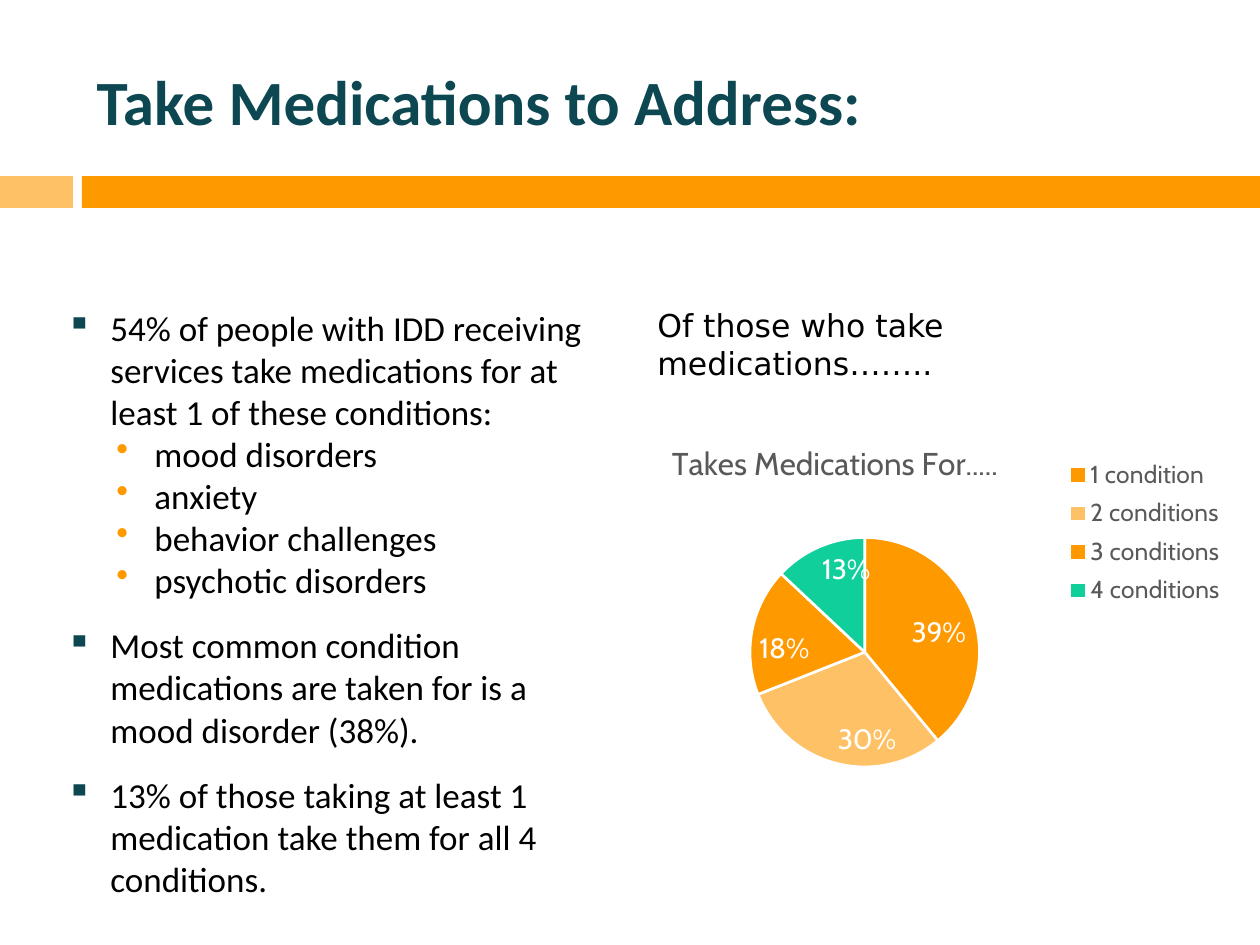
from lxml import etree
from pptx import Presentation
from pptx.chart.data import CategoryChartData
from pptx.dml.color import RGBColor
from pptx.enum.chart import XL_CHART_TYPE, XL_LABEL_POSITION, XL_LEGEND_POSITION
from pptx.enum.shapes import MSO_SHAPE
from pptx.enum.text import MSO_ANCHOR, PP_ALIGN
from pptx.oxml import parse_xml
from pptx.oxml.ns import nsdecls, qn
from pptx.util import Pt

PIE = XL_CHART_TYPE.PIE
INSIDE_END = XL_LABEL_POSITION.INSIDE_END
LEGEND_BOTTOM = XL_LEGEND_POSITION.BOTTOM
RECTANGLE = MSO_SHAPE.RECTANGLE
MIDDLE = MSO_ANCHOR.MIDDLE
LEFT = PP_ALIGN.LEFT

TEAL = RGBColor(0x0D, 0x47, 0x51)
ORANGE = RGBColor(0xFF, 0x99, 0x00)
PEACH = RGBColor(0xFF, 0xC1, 0x65)
GREEN = RGBColor(0x10, 0xCF, 0x9B)
GREY = RGBColor(0x59, 0x59, 0x59)
BLACK = RGBColor(0, 0, 0)
WHITE = RGBColor(0xFF, 0xFF, 0xFF)

PX_PER_INCH = 126
FINDINGS = [
    (0, 0, "54% of people with IDD receiving services take medications for at least 1 of these conditions:"),
    (1, 0, "mood disorders"),
    (1, 0, "anxiety"),
    (1, 0, "behavior challenges"),
    (1, 0, "psychotic disorders"),
    (0, 13.5, "Most common condition medications are taken for is a mood disorder (38%)."),
    (0, 13.5, "13% of those taking at least 1 medication take them for all 4 conditions."),
]
BULLETS = [("▪", TEAL, 44, 44), ("•", ORANGE, 88, 38)]
CONDITIONS = [
    ("1 condition", 0.39, ORANGE),
    ("2 conditions", 0.30, PEACH),
    ("3 conditions", 0.18, ORANGE),
    ("4 conditions", 0.13, GREEN),
]


def px(length):
    """Turn pixels into EMU."""
    return round(length * 914400 / PX_PER_INCH)


def emu_box(box):
    """Turn a pixel box into EMU."""
    return [px(length) for length in box]


def style(font, name, size, color, bold=False):
    """Set the face, size, colour and weight of a font."""
    font.name, font.size, font.bold = name, Pt(size), bold
    font.color.rgb = color


def add_span(para, text, name, size, color, bold=False):
    """Add one formatted run to a paragraph."""
    span = para.add_run()
    span.text = text
    style(span.font, name, size, color, bold)


def add_title(page, box):
    """Place the slide title."""
    title = page.shapes.title
    title.left, title.top, title.width, title.height = emu_box(box)
    title.text_frame.vertical_anchor = MIDDLE
    para = title.text_frame.paragraphs[0]
    para.alignment = LEFT
    add_span(para, "Take Medications to Address:", "Calibri", 36, TEAL, True)


def add_band(page, box):
    """Draw the two-part band below the title."""
    left, top, width, height = box
    tab, gap = 73, 9
    rest = tab + gap
    for offset, length, color in [(0, tab, PEACH), (rest, width - rest, ORANGE)]:
        bar = page.shapes.add_shape(
            RECTANGLE, *emu_box((left + offset, top, length, height)))
        bar.shadow.inherit = False
        bar.fill.solid()
        bar.fill.fore_color.rgb = color
        bar.line.fill.background()


def set_bullet(para, level):
    """Give a paragraph the bullet and indent of its level."""
    sign, color, margin, hang = BULLETS[level]
    props = para._p.get_or_add_pPr()
    props.set("marL", str(px(margin)))
    props.set("indent", str(-px(hang)))
    tint = etree.SubElement(props, qn("a:buClr"))
    etree.SubElement(tint, qn("a:srgbClr"), val=str(color))
    etree.SubElement(props, qn("a:buChar"), char=sign)


def add_text_box(page, box):
    """Add a wrapping text box and return its frame."""
    frame = page.shapes.add_textbox(*emu_box(box)).text_frame
    frame.word_wrap = True
    return frame


def add_findings(page, box):
    """Write the bulleted findings."""
    frame = add_text_box(page, box)
    for index, (level, space, text) in enumerate(FINDINGS):
        para = frame.add_paragraph() if index else frame.paragraphs[0]
        para.level = level
        para.space_before = Pt(space)
        set_bullet(para, level)
        add_span(para, text, "Calibri", 20, BLACK)


def add_intro(page, box):
    """Write the line that introduces the chart."""
    frame = add_text_box(page, box)
    add_span(frame.paragraphs[0], "Of those who take medications……..",
             "DejaVu Sans", 18, BLACK)


def make_layout(x, y, w, h, inner=False):
    """Build a manual chart layout from fractions of the chart."""
    target = '<c:layoutTarget val="inner"/>' if inner else ""
    modes = "".join(f'<c:{axis}Mode val="edge"/>' for axis in "xy")
    sizes = "".join(f'<c:{key} val="{value}"/>'
                    for key, value in zip("xywh", (x, y, w, h)))
    return parse_xml(f'<c:layout {nsdecls("c")}><c:manualLayout>'
                     f'{target}{modes}{sizes}</c:manualLayout></c:layout>')


def set_layout(parent, layout, position):
    """Replace the layout of a chart part."""
    for old in parent.findall(qn("c:layout")):
        parent.remove(old)
    parent.insert(position, layout)


def add_pie(page, box):
    """Place the pie of conditions with its title, labels and legend."""
    data = CategoryChartData(number_format="0%")
    data.categories = [name for name, _, _ in CONDITIONS]
    data.add_series("Series 1", [share for _, share, _ in CONDITIONS])
    chart = page.shapes.add_chart(PIE, *emu_box(box), data).chart
    style(chart.font, "Cabin", 10, BLACK)
    chart.has_title = True
    add_span(chart.chart_title.text_frame.paragraphs[0],
             "Takes Medications For.....", "Cabin", 18, GREY)
    chart.chart_title.include_in_layout = False

    chart.has_legend = True
    legend = chart.legend
    legend.position = LEGEND_BOTTOM
    legend.include_in_layout = False
    style(legend.font, "Cabin", 14, GREY)
    set_layout(legend._element, make_layout(0.77, 0.07, 0.19, 0.36), 1)

    plot = chart.plots[0]
    plot.vary_by_categories = True
    set_layout(chart._chartSpace.chart.plotArea,
               make_layout(0.4, 0.26, 0.27, 0.51, True), 0)
    series = plot.series[0]
    for index, (_, _, color) in enumerate(CONDITIONS):
        form = series.points[index].format
        form.fill.solid()
        form.fill.fore_color.rgb = color
        form.line.color.rgb = WHITE
        form.line.width = Pt(1.5)
    labels = series.data_labels
    labels.show_value = True
    labels.number_format, labels.number_format_is_linked = "0%", False
    labels.position = INSIDE_END
    style(labels.font, "Cabin", 16, WHITE)


def main():
    """Build and save the slide."""
    deck = Presentation()
    deck.slide_width, deck.slide_height = px(1260), px(945)
    page = deck.slides.add_slide(deck.slide_layouts[5])
    add_band(page, (0, 176, 1260, 32))
    add_title(page, (84, 32, 1124, 136))
    add_findings(page, (54, 300, 556, 472))
    add_pie(page, (410, 420, 850, 451))
    add_intro(page, (645, 300, 568, 89))
    deck.save("out.pptx")


if __name__ == "__main__":
    main()
